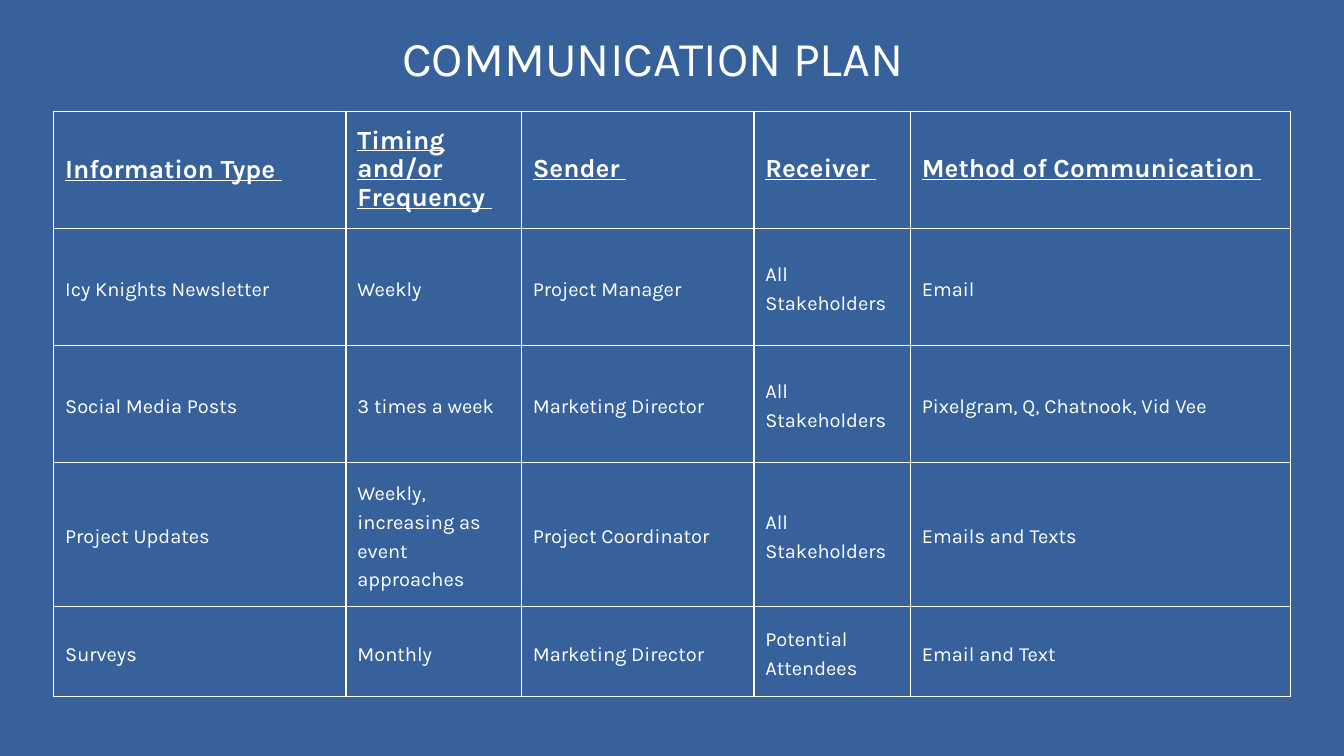
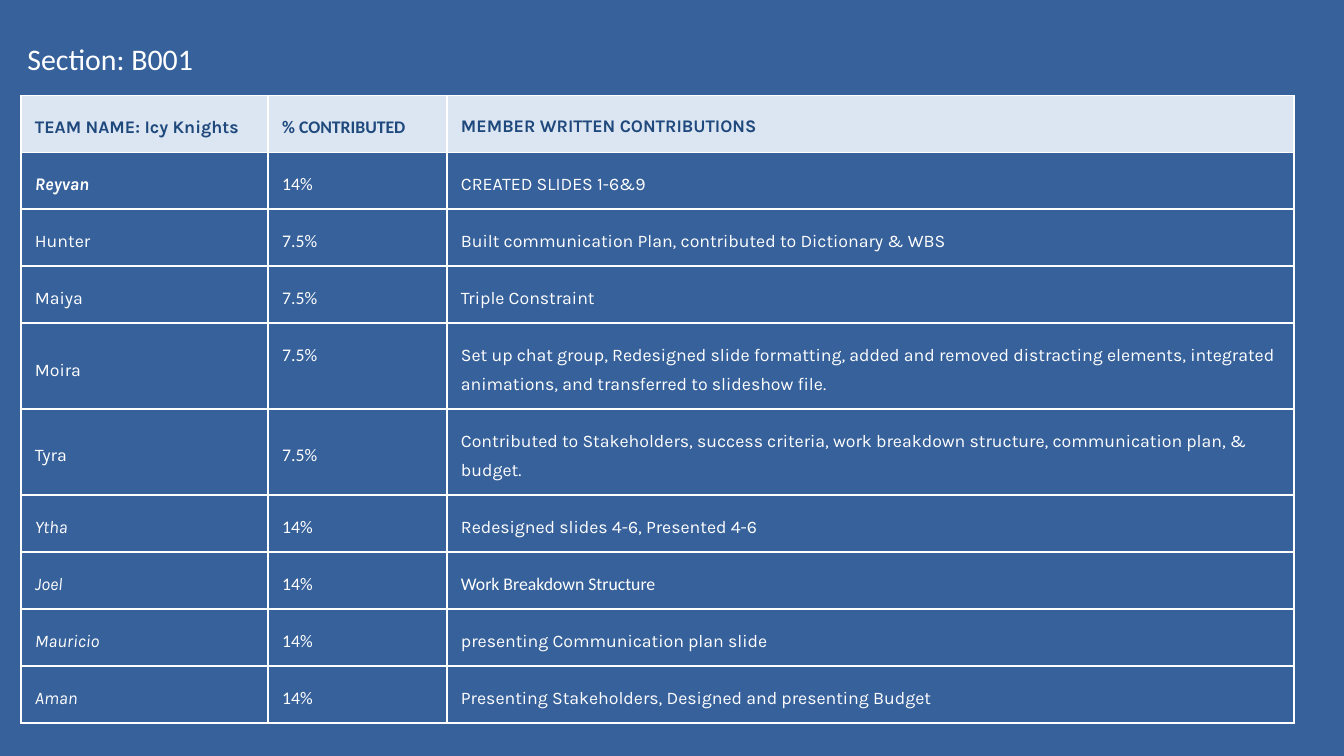
"""Build a communication plan slide and a team contribution slide."""
from dataclasses import dataclass

from lxml import etree
from pptx import Presentation, util as u
from pptx.dml.color import RGBColor
from pptx.enum import text
from pptx.oxml.ns import qn


@dataclass(frozen=True)
class Theme:
    back: str = "37619B"
    ink: str = "FFFFFF"
    head_ink: str = "1F497D"
    head_fill: str = "DCE6F2"
    main: str = "Karla"
    alt: str = "Calibri"
    title: float = 52
    section: float = 32
    plan_head: float = 28
    plan_body: float = 21.5
    team: float = 19
    leading: float = 30.8


T = Theme()
WIDTH, HEIGHT = 20, 11.25

PLAN_HEAD = ["Information Type ", "Timing and/or Frequency ", "Sender ", "Receiver ",
             "Method of Communication "]
PLAN = [
    ["Icy Knights Newsletter", "Weekly", "Project Manager", "All Stakeholders", "Email"],
    ["Social Media Posts", "3 times a week", "Marketing Director", "All Stakeholders",
     "Pixelgram, Q, Chatnook, Vid Vee"],
    ["Project Updates", "Weekly, increasing as event approaches", "Project Coordinator",
     "All Stakeholders", "Emails and Texts"],
    ["Surveys", "Monthly", "Marketing Director", "Potential Attendees", "Email and Text"],
]
PLAN_COLS = [4.35, 2.61, 3.46, 2.33, 5.65]
PLAN_ROWS = [1.74, 1.74, 1.74, 2.15, 1.34]

TEAM_HEAD = ["TEAM NAME: Icy Knights", "% CONTRIBUTED", "MEMBER WRITTEN CONTRIBUTIONS"]
TEAM = [
    ["Reyvan", "14%", "CREATED SLIDES 1-6&9"],
    ["Hunter", "7.5%", "Built communication Plan, contributed to Dictionary & WBS"],
    ["Maiya", "7.5%", "Triple Constraint"],
    ["Moira", "7.5%", "Set up chat group, Redesigned slide formatting, added and removed "
     "distracting elements, integrated animations, and transferred to slideshow file."],
    ["Tyra", "7.5%", "Contributed to Stakeholders, success criteria, work breakdown structure, "
     "communication plan, & budget."],
    ["Ytha", "14%", "Redesigned slides 4-6, Presented 4-6"],
    ["Joel", "14%", "Work Breakdown Structure"],
    ["Mauricio", "14%", "presenting Communication plan slide"],
    ["Aman", "14%", "Presenting Stakeholders, Designed and presenting Budget"],
]
TEAM_COLS = [3.68, 2.66, 12.61]
TEAM_ROWS = [1.12 if row[0] == "Moira" else 0.76 for row in [TEAM_HEAD] + TEAM]
LEAD = "Reyvan"
ITALIC = {LEAD, "Ytha", "Joel", "Mauricio", "Aman"}


def put(tf, words, leading=None, align=None, color=T.ink, **fmt):
    p = tf.paragraphs[0]
    p.alignment = align
    if leading:
        p.line_spacing = u.Pt(leading)
    r = p.add_run()
    r.text = words
    r.font.color.rgb = RGBColor.from_string(color)
    for key, value in fmt.items():
        setattr(r.font, key, value)


def add_slide(prs):
    s = prs.slides.add_slide(prs.slide_layouts[6])
    s.background.fill.solid()
    s.background.fill.fore_color.rgb = RGBColor.from_string(T.back)
    return s


def add_title(s, box, words, inset=None, **fmt):
    tf = s.shapes.add_textbox(*map(u.Inches, box)).text_frame
    tf.word_wrap = True
    tf.auto_size = text.MSO_AUTO_SIZE.SHAPE_TO_FIT_TEXT
    if inset is not None:
        for side in ("left", "right", "top", "bottom"):
            setattr(tf, f"margin_{side}", u.Inches(inset))
    put(tf, words, **fmt)


def add_borders(cell, points):
    tc_pr = cell._tc.get_or_add_tcPr()
    for side in ("lnL", "lnR", "lnT", "lnB"):
        ln = etree.SubElement(tc_pr, qn(f"a:{side}"), w=str(u.Pt(points)))
        fill = etree.SubElement(ln, qn("a:solidFill"))
        etree.SubElement(fill, qn("a:srgbClr"), val=T.ink)


def add_grid(s, corner, cols, rows, data, inset, border, style):
    size = (sum(cols), sum(rows))
    frame = s.shapes.add_table(len(rows), len(cols), *map(u.Inches, (*corner, *size)))
    table = frame.table
    table.first_row = table.horz_banding = False
    for col, width in zip(table.columns, cols):
        col.width = u.Inches(width)
    for row, height in zip(table.rows, rows):
        row.height = u.Inches(height)
    for i, line in enumerate(data):
        for j, words in enumerate(line):
            cell = table.cell(i, j)
            fmt = {"leading": T.leading, "name": T.main, **style(i, j, words)}
            fill, extra = fmt.pop("fill", None), fmt.pop("extra", 0)
            cell.vertical_anchor = text.MSO_ANCHOR.MIDDLE
            for side in ("left", "right", "top", "bottom"):
                gap = inset + (extra if side == "bottom" else 0)
                setattr(cell, f"margin_{side}", u.Inches(gap))
            add_borders(cell, border)
            if fill:
                cell.fill.solid()
                cell.fill.fore_color.rgb = RGBColor.from_string(fill)
            else:
                cell.fill.background()
            put(cell.text_frame, words, **fmt)


def plan_style(i, j, words):
    if i:
        return {"size": u.Pt(T.plan_body), "bold": False}
    return {"size": u.Pt(T.plan_head), "bold": True, "underline": True,
            "leading": T.leading if j else 32.2}


def team_style(i, j, words):
    alt = j == 1 or words == "Work Breakdown Structure"
    fmt = {"size": u.Pt(T.team), "name": T.alt if alt else T.main,
           "bold": i == 0 or words == LEAD, "italic": words in ITALIC}
    if i == 0:
        fmt.update(color=T.head_ink, fill=T.head_fill, leading=28 if j == 2 else T.leading)
    if j == 1 and i and TEAM[i - 1][0] == "Moira":
        fmt["extra"] = T.leading / 72
    return fmt


def main():
    prs = Presentation()
    prs.slide_width, prs.slide_height = u.Inches(WIDTH), u.Inches(HEIGHT)

    s = add_slide(prs)
    add_grid(s, (0.8, 1.66), PLAN_COLS, PLAN_ROWS, [PLAN_HEAD] + PLAN, 0.17, 1.5, plan_style)
    add_title(s, (3.9, 0.27, 11.63, 0.97), "COMMUNICATION PLAN", inset=0, leading=72.8,
              align=text.PP_ALIGN.CENTER, name=T.main, size=u.Pt(T.title))

    s = add_slide(prs)
    add_grid(s, (0.31, 1.42), TEAM_COLS, TEAM_ROWS, [TEAM_HEAD] + TEAM, 0.21, 2.25, team_style)
    add_title(s, (0.31, 0.55, 9.34, 0.64), "Section: B001", name=T.alt, size=u.Pt(T.section))

    prs.save("out.pptx")


if __name__ == "__main__":
    main()
